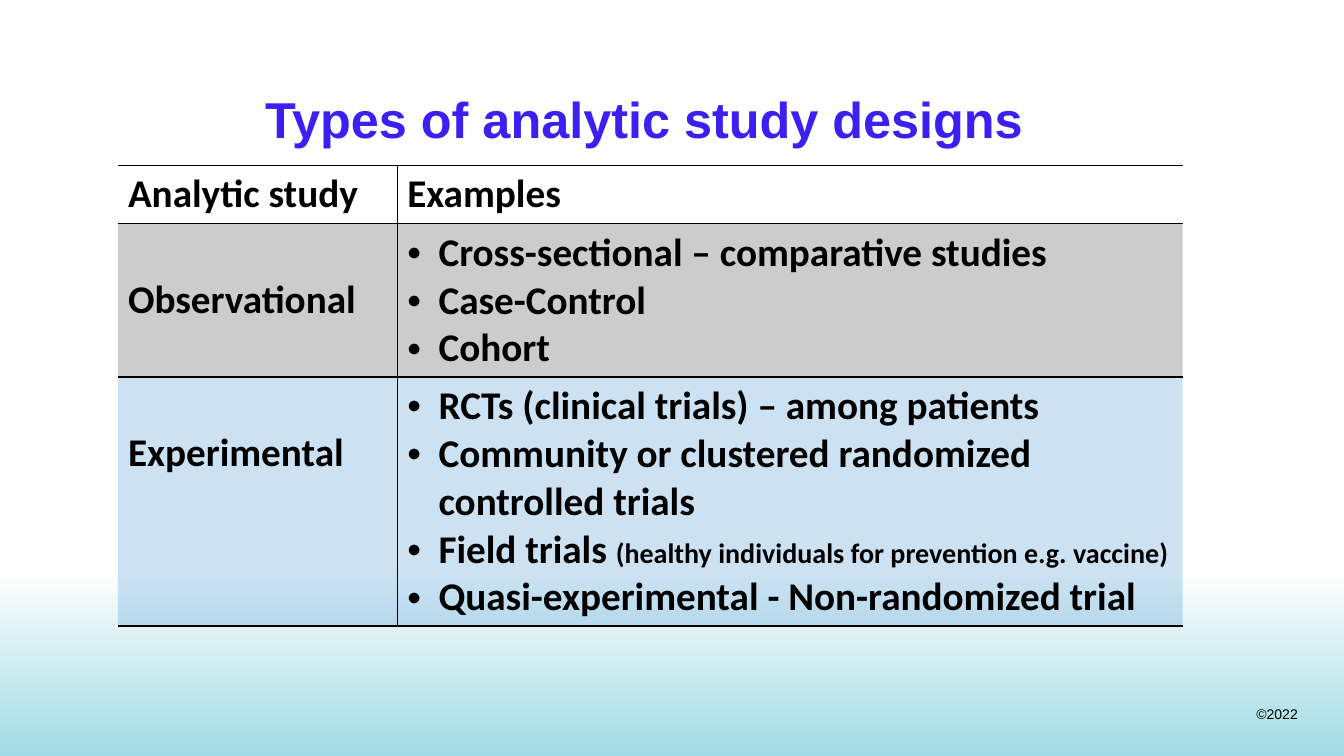
from lxml.etree import SubElement
from pptx import Presentation
from pptx.dml.color import RGBColor
from pptx.enum.shapes import MSO_SHAPE
from pptx.enum.text import MSO_ANCHOR, PP_ALIGN
from pptx.oxml import parse_xml
from pptx.oxml.ns import nsdecls, qn
from pptx.util import Inches, Pt

TITLE = "Types of analytic study designs"
COPYRIGHT = "©2022"
HEADERS = ["Analytic study", "Examples"]
# label, fill, row height, examples; each example is a list of (text, size) runs
STUDIES = [
    ("Observational", "000000", 1.52, [
        [("Cross-sectional – comparative studies", 28)],
        [("Case-Control", 28)],
        [("Cohort", 28)],
    ]),
    ("Experimental", "0070C0", 2.47, [
        [("RCTs (clinical trials) – among patients", 28)],
        [("Community or clustered randomized controlled trials", 28)],
        [("Field trials ", 28),
         ("(healthy individuals for prevention e.g. vaccine)", 20)],
        [("Quasi-experimental - Non-randomized trial", 28)],
    ]),
]
COL_WIDTHS = [2.77, 7.79]
HEADER_HEIGHT = 0.58
LABEL_TOP = 0.52  # puts a label beside the second example
INDENT = 0.31


def color(value):
    return RGBColor.from_string(value)


def add_run(p, text, size, font="Calibri", rgb="000000", bold=True):
    r = p.add_run()
    r.text = text
    r.font.size = Pt(size)
    r.font.name = font
    r.font.bold = bold
    r.font.color.rgb = color(rgb)


def add_text(s, box, text, size, align, anchor, wrap, **style):
    tf = s.shapes.add_textbox(*map(Inches, box)).text_frame
    tf.word_wrap = wrap
    tf.vertical_anchor = anchor
    p = tf.paragraphs[0]
    p.alignment = align
    add_run(p, text, size, font="Arial", **style)


def add_bullet(p):
    pPr = p._p.get_or_add_pPr()
    pPr.set("marL", str(Inches(INDENT)))
    pPr.set("indent", str(-Inches(INDENT)))
    SubElement(pPr, qn("a:buFont")).set("typeface", "Arial")
    SubElement(pPr, qn("a:buChar")).set("char", "•")


def set_borders(cell, visible):
    """Draw the named sides as 1 pt black lines and hide the others."""
    tcPr = cell._tc.get_or_add_tcPr()
    black = '<a:solidFill><a:srgbClr val="000000"/></a:solidFill>'
    for i, side in enumerate("LRTB"):
        line = black if side in visible else "<a:noFill/>"
        tcPr.insert(i, parse_xml(
            f'<a:ln{side} {nsdecls("a")} w="{Pt(1)}">{line}</a:ln{side}>'))


def set_tint(cell, rgb):
    """Fill the cell with the colour at 20 % opacity."""
    cell.fill.solid()
    cell.fill.fore_color.rgb = color(rgb)
    clr = cell._tc.tcPr.find(qn("a:solidFill")).find(qn("a:srgbClr"))
    SubElement(clr, qn("a:alpha")).set("val", "20000")


def add_study_table(s):
    heights = [HEADER_HEIGHT] + [study[2] for study in STUDIES]
    table = s.shapes.add_table(
        len(heights), len(COL_WIDTHS), Inches(1.17), Inches(1.64),
        Inches(sum(COL_WIDTHS)), Inches(sum(heights))).table
    table.first_row = table.horz_banding = False
    for col, width in zip(table.columns, COL_WIDTHS):
        col.width = Inches(width)
    for row, height in zip(table.rows, heights):
        row.height = Inches(height)

    for c, header in enumerate(HEADERS):
        cell = table.cell(0, c)
        cell.fill.background()
        add_run(cell.text_frame.paragraphs[0], header, 28)

    for i, (label, rgb, _, examples) in enumerate(STUDIES, start=1):
        name, details = table.cell(i, 0), table.cell(i, 1)
        name.margin_top = Inches(LABEL_TOP)
        add_run(name.text_frame.paragraphs[0], label, 28)
        tf = details.text_frame
        for n, runs in enumerate(examples):
            p = tf.add_paragraph() if n else tf.paragraphs[0]
            add_bullet(p)
            for text, size in runs:
                add_run(p, text, size)
        for cell in (name, details):
            set_tint(cell, rgb)

    for row in table.rows:
        for cell, visible in zip(row.cells, ("RTB", "LTB")):
            set_borders(cell, visible)


def main():
    prs = Presentation()
    prs.slide_width, prs.slide_height = Inches(13.33), Inches(7.5)
    s = prs.slides.add_slide(prs.slide_layouts[6])

    sp = s.shapes.add_shape(MSO_SHAPE.RECTANGLE, 0, Inches(5.67),
                            Inches(13.33), Inches(1.83))
    sp.shadow.inherit = False
    sp.line.fill.background()
    sp.fill.gradient()
    sp.fill.gradient_angle = 270
    for stop, rgb in zip(sp.fill.gradient_stops, ("FFFFFF", "A1DBE4")):
        stop.color.rgb = color(rgb)

    add_text(s, (12.36, 6.95, 0.61, 0.27), COPYRIGHT, 10, PP_ALIGN.RIGHT,
             MSO_ANCHOR.TOP, False, bold=False)
    add_text(s, (2.18, 0.76, 8.42, 0.83), TITLE, 36, PP_ALIGN.CENTER,
             MSO_ANCHOR.MIDDLE, True, rgb="3D1FF1")
    add_study_table(s)
    prs.save("out.pptx")


if __name__ == "__main__":
    main()
